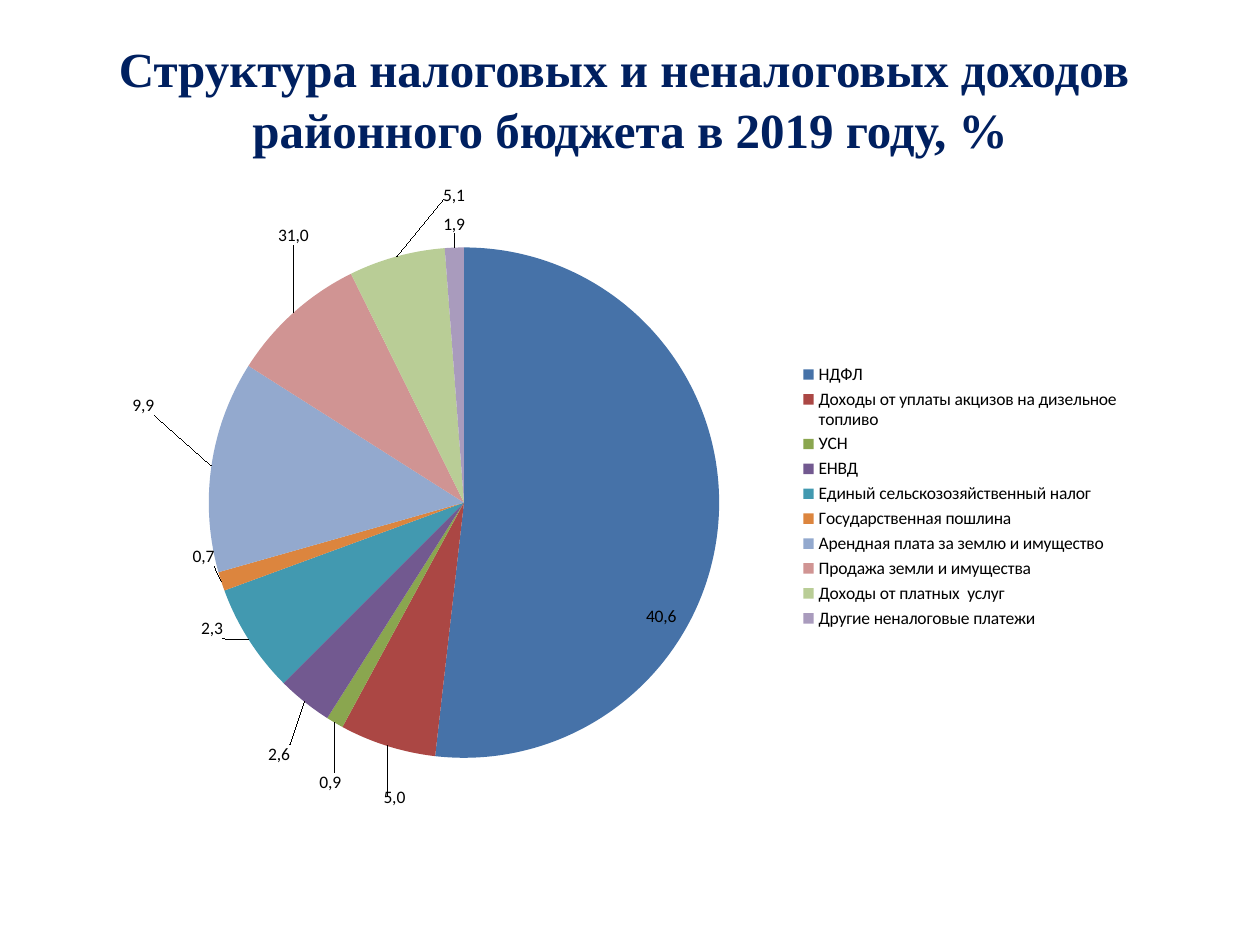
"""Build a slide with a pie chart of district budget revenue."""
from typing import Any, NamedTuple

import pptx
import pptx.chart.data
import pptx.dml.color
import pptx.enum.chart
import pptx.enum.text
import pptx.oxml
import pptx.oxml.ns
import pptx.util

Inches = pptx.util.Inches


class Slice(NamedTuple):
    name: str
    value: float
    color: str
    label: str
    shift_x: float
    shift_y: float


SLICES = [
    Slice("НДФЛ", 51.8, "4672A8", "40,6", -0.08, 0.16),
    Slice("Доходы от уплаты акцизов на дизельное топливо", 6.1, "AB4744", "5,0", 0.02, 0.07),
    Slice("УСН", 1.1, "8AA64F", "0,9", 0.01, 0.07),
    Slice("ЕНВД", 3.5, "725990", "2,6", -0.01, 0.06),
    Slice("Единый сельскозозяйственный налог", 6.9, "4299B0", "2,3", -0.02, -0.04),
    Slice("Государственная пошлина", 1.2, "DC853E", "0,7", 0, -0.06),
    Slice("Арендная плата за землю и имущество", 13.4, "93A9CE", "9,9", -0.05, -0.08),
    Slice("Продажа земли и имущества", 8.7, "D09493", "31,0", 0.02, -0.1),
    Slice("Доходы от платных  услуг", 6.1, "B9CD96", "5,1", 0.07, -0.08),
    Slice("Другие неналоговые платежи", 1.2, "A99BBD", "1,9", 0, -0.01),
]
TITLE = ["Структура налоговых и неналоговых доходов ", "районного бюджета в 2019 году, %"]


def rgb(color: str) -> pptx.dml.color.RGBColor:
    return pptx.dml.color.RGBColor.from_string(color)


def format_font(font: Any, name: str, size: float, color: str, bold: bool = False) -> None:
    font.name, font.size, font.bold = name, pptx.util.Pt(size), bold
    font.color.rgb = rgb(color)


def write(para: Any, text: str, **style: Any) -> None:
    span = para.add_run()
    span.text = text
    format_font(span.font, **style)


def layout(**settings: Any) -> Any:
    """Return a manual chart layout."""
    items = "".join(f'<c:{key} val="{value}"/>' for key, value in settings.items())
    return pptx.oxml.parse_xml(
        f'<c:layout {pptx.oxml.ns.nsdecls("c")}><c:manualLayout>{items}</c:manualLayout></c:layout>')


def set_layout(area: Any, position: int, **settings: Any) -> None:
    for old in area.findall(pptx.oxml.ns.qn("c:layout")):
        area.remove(old)
    area.insert(position, layout(**settings))


def add_title(page: Any) -> None:
    box = page.shapes.title
    box.left, box.top, box.width, box.height = Inches(0), Inches(-0.23), Inches(10), Inches(1.5)
    frame = box.text_frame
    frame.word_wrap = True
    frame.margin_top = Inches(0.55)
    frame.vertical_anchor = pptx.enum.text.MSO_ANCHOR.MIDDLE
    for index, line in enumerate(TITLE):
        para = frame.add_paragraph() if index else frame.paragraphs[0]
        para.alignment = pptx.enum.text.PP_ALIGN.CENTER
        para.line_spacing = 1.05
        write(para, line, name="Times New Roman", size=28, color="002060", bold=True)


def format_slice(point: Any, part: Slice) -> None:
    point.format.fill.solid()
    point.format.fill.fore_color.rgb = rgb(part.color)
    point.format.line.fill.background()
    label = point.data_label
    write(label.text_frame.paragraphs[0], part.label, name="Calibri", size=10, color="000000")
    label.position = pptx.enum.chart.XL_LABEL_POSITION.OUTSIDE_END


def add_chart(page: Any) -> None:
    data = pptx.chart.data.CategoryChartData(number_format="0.0")
    data.categories = [part.name for part in SLICES]
    data.add_series("Series 1", [part.value for part in SLICES])
    chart = page.shapes.add_chart(
        pptx.enum.chart.XL_CHART_TYPE.PIE,
        Inches(0.98), Inches(1.47), Inches(7.95), Inches(4.94), data).chart
    format_font(chart.font, "Calibri", 10, "000000")
    chart.has_title = False
    chart.has_legend = True
    chart.legend.position = pptx.enum.chart.XL_LEGEND_POSITION.RIGHT
    chart.legend.include_in_layout = False
    plot = chart.plots[0]
    plot.vary_by_categories = True
    series = plot.series[0]
    for index, part in enumerate(SLICES):
        format_slice(series.points[index], part)
    labels = series.data_labels
    labels.show_value = True
    labels.number_format, labels.number_format_is_linked = "0.0", False
    root = chart.element if hasattr(chart, "element") else chart._chartSpace
    for area, part in zip(root.iter(pptx.oxml.ns.qn("c:dLbl")), SLICES):
        set_layout(area, 1, x=part.shift_x, y=part.shift_y)
    set_layout(next(root.iter(pptx.oxml.ns.qn("c:plotArea"))), 0, layoutTarget="inner",
               xMode="edge", yMode="edge", x=0.08, y=0.1, w=0.52, h=0.82)
    set_layout(next(root.iter(pptx.oxml.ns.qn("c:legend"))), 1,
               xMode="edge", yMode="edge", x=0.67, y=0.28, w=0.33, h=0.44)


def main() -> None:
    deck = pptx.Presentation()
    deck.slide_width, deck.slide_height = Inches(10), Inches(7.5)
    page = deck.slides.add_slide(deck.slide_layouts.get_by_name("Title Only"))
    add_title(page)
    add_chart(page)
    deck.save("out.pptx")


if __name__ == "__main__":
    main()
